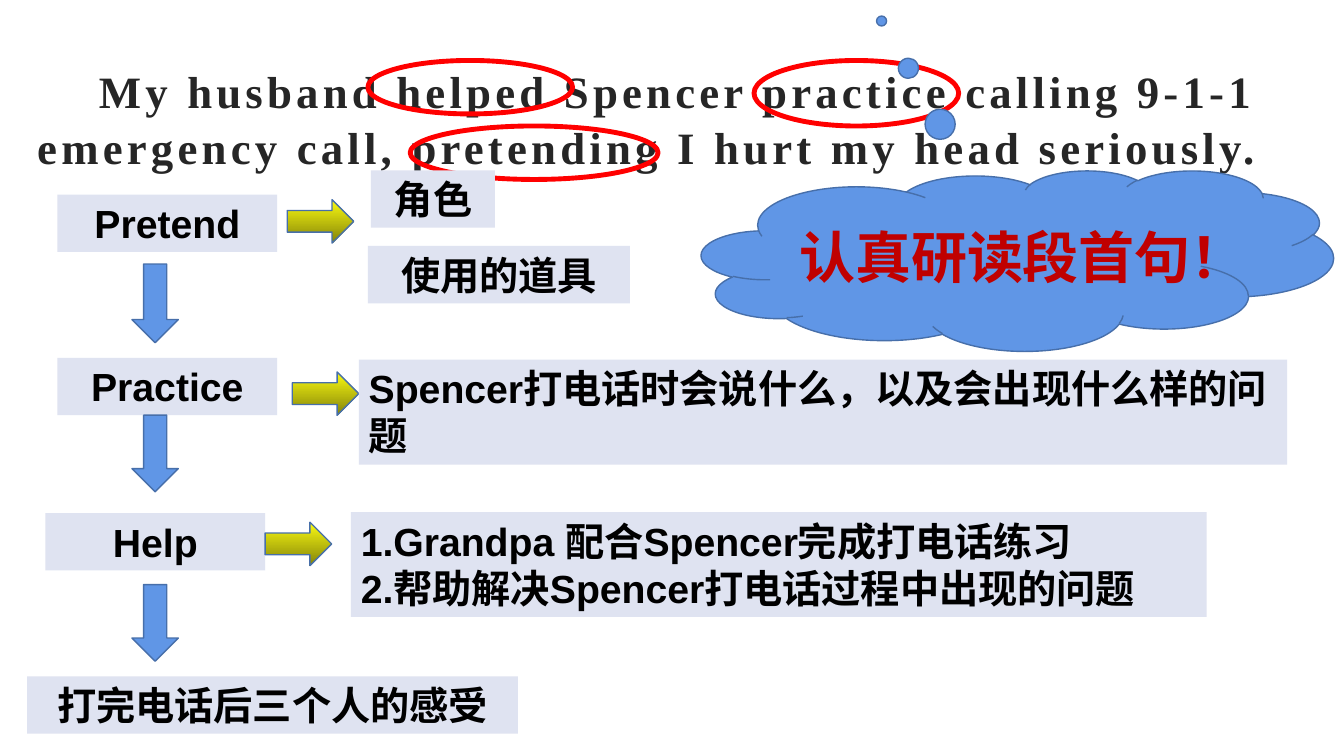
from pptx import Presentation
from pptx.dml.color import RGBColor
from pptx.enum.shapes import MSO_SHAPE
from pptx.enum.text import MSO_ANCHOR, MSO_AUTO_SIZE, PP_ALIGN
from pptx.util import Pt

OVAL = MSO_SHAPE.OVAL
DOWN = MSO_SHAPE.DOWN_ARROW
RIGHT = MSO_SHAPE.RIGHT_ARROW
CLOUD = MSO_SHAPE.CLOUD_CALLOUT
LEFT, CENTER = PP_ALIGN.LEFT, PP_ALIGN.CENTER
MIDDLE = MSO_ANCHOR.MIDDLE
GROW = MSO_AUTO_SIZE.SHAPE_TO_FIT_TEXT
TITLE_ONLY = 5

COLORS = {
    "title": "262626", "text": "000000", "shout": "C00000",
    "ring": "FF0000", "box": "DFE3F1", "blue": "6096E6",
    "edge": "476FAA", "light": "FBFB11", "dark": "838309",
}


class Board:
    """Holds the style and the current slide."""

    def __init__(self, deck):
        self.slide = deck.slides.add_slide(deck.slide_layouts[TITLE_ONLY])
        self.shapes = self.slide.shapes

    def color(self, name):
        return RGBColor.from_string(COLORS[name])

    def style(self, para, size, color, align, face="Arial"):
        para.alignment = align
        font = para.font
        font.name, font.size, font.bold = face, Pt(size), True
        font.color.rgb = self.color(color)

    def title(self, text, x, y, w, h):
        head = self.shapes.title
        head.left, head.top, head.width, head.height = map(Pt, (x, y, w, h))
        frame = head.text_frame
        frame.word_wrap, frame.vertical_anchor = True, MIDDLE
        frame.auto_size = MSO_AUTO_SIZE.NONE
        para = frame.paragraphs[0]
        run = para.add_run()
        run.text = text
        self.style(para, 32, "title", LEFT, "Times New Roman")
        para.line_spacing = 1.05
        # First-line indent and letter spacing
        props = para._p.get_or_add_pPr()
        props.set("marL", "0")
        props.set("indent", str(Pt(44)))
        run.font._element.set("spc", "300")

    def shape(self, kind, x, y, w, h, edge="edge", width=1):
        item = self.shapes.add_shape(kind, *map(Pt, (x, y, w, h)))
        item.shadow.inherit = False
        item.line.color.rgb = self.color(edge)
        item.line.width = Pt(width)
        return item

    def ring(self, x, y, w, h):
        self.shape(OVAL, x, y, w, h, "ring", 3.5).fill.background()

    def down(self, y, h):
        fill = self.shape(DOWN, 94.3, y, 33.1, h).fill
        fill.solid()
        fill.fore_color.rgb = self.color("blue")

    def right(self, x, y):
        fill = self.shape(RIGHT, x, y, 47.5, 31).fill
        fill.gradient()
        fill.gradient_angle = 270
        for stop, name in zip(fill.gradient_stops, ("light", "dark")):
            stop.color.rgb = self.color(name)

    def box(self, lines, x, y, w, h=41, align=CENTER):
        item = self.shapes.add_textbox(*map(Pt, (x, y, w, h)))
        item.fill.solid()
        item.fill.fore_color.rgb = self.color("box")
        frame = item.text_frame
        frame.word_wrap, frame.auto_size = True, GROW
        frame.text = lines
        for para in frame.paragraphs:
            self.style(para, 28, "text", align)

    def cloud(self, text, x, y, w, h, tail):
        item = self.shape(CLOUD, x, y, w, h)
        item.adjustments[0], item.adjustments[1] = tail
        item.fill.solid()
        item.fill.fore_color.rgb = self.color("blue")
        frame = item.text_frame
        frame.word_wrap, frame.vertical_anchor = True, MIDDLE
        frame.text = text
        self.style(frame.paragraphs[0], 40, "shout", CENTER)


def main():
    deck = Presentation()
    deck.slide_width, deck.slide_height = Pt(960), Pt(540)
    board = Board(deck)

    # Opening sentence with its key words ringed
    board.title("My husband helped Spencer practice calling 9-1-1 emergency "
                "call, pretending I hurt my head seriously.",
                19.4, 12.2, 921, 143.3)
    for spot in ((262.8, 43.2, 146.2, 38.2), (538.6, 43.2, 146.2, 46.8),
                 (293, 90, 177.1, 38.2)):
        board.ring(*spot)

    # Steps down the left side
    for word, x, y in (("Pretend", 41, 139), ("Practice", 41, 255.6),
                       ("Help", 32.4, 366.5)):
        board.box(word, x, y, 157)
    board.box("打完电话后三个人的感受", 19.4, 483.1, 350.6)
    for y, h in ((188.6, 56.2), (296.6, 54.7), (417.6, 54.7)):
        board.down(y, h)

    # Ideas to the right of each step
    for spot in ((205.2, 142.6), (208.8, 265.7), (189.4, 373)):
        board.right(*spot)
    board.box("角色", 265, 121.7, 88.6)
    board.box("使用的道具", 262.8, 175.7, 187.2)
    board.box("Spencer打电话时会说什么，以及会出现什么样的问题",
              256.3, 257, 663.1, 74.9, LEFT)
    board.box("1.Grandpa 配合Spencer完成打电话练习\n"
              "2.帮助解决Spencer打电话过程中出现的问题",
              250.6, 365.8, 611.3, 74.9, LEFT)

    # Advice in the cloud
    board.cloud("认真研读段首句！", 501.1, 121.7, 451.4, 128.9, (-0.215, -1.328))

    deck.save("out.pptx")


if __name__ == "__main__":
    main()
